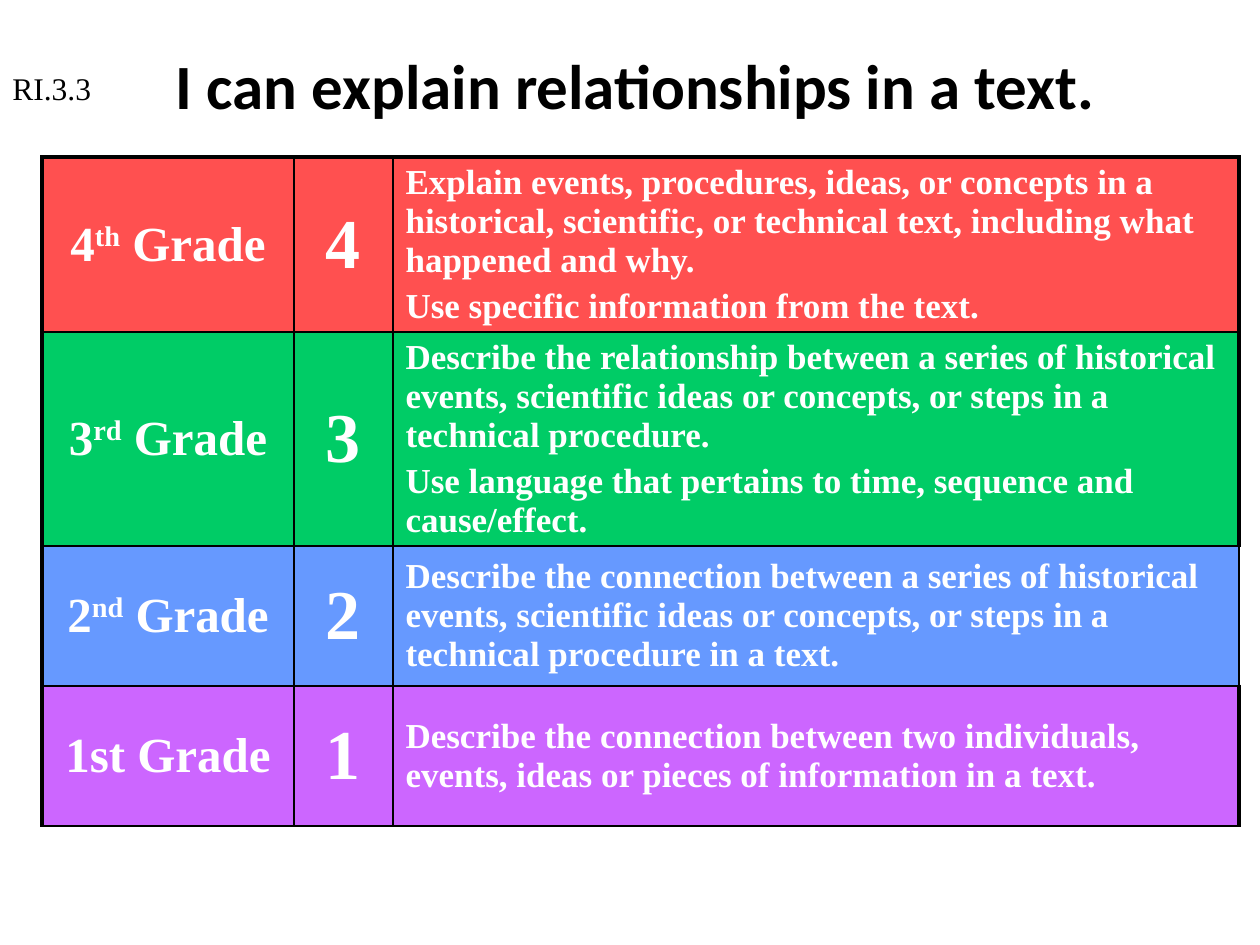
from lxml import etree
from pptx import Presentation
from pptx.dml.color import RGBColor
from pptx.enum.text import MSO_ANCHOR, MSO_AUTO_SIZE, PP_ALIGN
from pptx.oxml.ns import qn
from pptx.util import Emu, Pt

PX = 914400 // 126
CENTER, LEFT = PP_ALIGN.CENTER, PP_ALIGN.LEFT
MIDDLE = MSO_ANCHOR.MIDDLE
FIT_SHAPE = MSO_AUTO_SIZE.SHAPE_TO_FIT_TEXT
TITLE_ONLY = 5

BLACK = RGBColor(0x00, 0x00, 0x00)
WHITE = RGBColor(0xFF, 0xFF, 0xFF)
RED = RGBColor(0xFF, 0x50, 0x50)
GREEN = RGBColor(0x00, 0xCC, 0x66)
BLUE = RGBColor(0x66, 0x99, 0xFF)
PURPLE = RGBColor(0xCC, 0x66, 0xFF)
SERIF, SANS = "Times New Roman", "Calibri"

COL_WIDTHS = (252, 99, 846)
THIN, MEDIUM, THICK = 1, 1.5, 2.25
BORDER_TAGS = ("a:lnL", "a:lnR", "a:lnT", "a:lnB")

# Height, fill, grade runs (text, raised), score, goals,
# vertical borders from left to right, and top and bottom borders by column
LEVELS = [
    (147, RED, [("4", False), ("th", True), (" Grade", False)], "4",
     ["Explain events, procedures, ideas, or concepts in a historical, "
      "scientific, or technical text, including what happened and why.",
      "Use specific information from the text."],
     (THICK, THIN, THIN, THICK), [(THICK, MEDIUM)] * 3),
    (161, GREEN, [("3", False), ("rd", True), (" Grade", False)], "3",
     ["Describe the relationship between a series of historical events, "
      "scientific ideas or concepts, or steps in a technical procedure.",
      "Use language that pertains to time, sequence and cause/effect."],
     (THICK, THIN, THIN, THICK),
     [(MEDIUM, THIN), (MEDIUM, THIN), (MEDIUM, MEDIUM)]),
    (140, BLUE, [("2", False), ("nd", True), (" Grade", False)], "2",
     ["Describe the connection between a series of historical events, "
      "scientific ideas or concepts, or steps in a technical procedure "
      "in a text."],
     (THICK, MEDIUM, MEDIUM, MEDIUM),
     [(THIN, THIN), (THIN, THIN), (MEDIUM, MEDIUM)]),
    (140, PURPLE, [("1st Grade", False)], "1",
     ["Describe the connection between two individuals, events, ideas or "
      "pieces of information in a text."],
     (THICK, THIN, THIN, THICK),
     [(THIN, MEDIUM), (THIN, MEDIUM), (MEDIUM, MEDIUM)]),
]


def px(n):
    return Emu(n * PX)


def style_font(font, size, name, color, bold=False):
    font.size = Pt(size)
    font.name = name
    font.color.rgb = color
    font.bold = bold


def set_borders(cell, widths):
    """Give a cell black left, right, top and bottom lines."""
    tcPr = cell._tc.get_or_add_tcPr()
    for tag, width in zip(BORDER_TAGS, widths):
        ln = etree.SubElement(tcPr, qn(tag), w=str(Pt(width)))
        fill = etree.SubElement(ln, qn("a:solidFill"))
        etree.SubElement(fill, qn("a:srgbClr"), val=str(BLACK))


def fill_cell(cell, paragraphs, size, align, color, borders):
    """Write paragraphs of (text, raised) runs into a coloured cell."""
    set_borders(cell, borders)
    cell.fill.solid()
    cell.fill.fore_color.rgb = color
    cell.vertical_anchor = MIDDLE
    tf = cell.text_frame
    for i, runs in enumerate(paragraphs):
        p = tf.add_paragraph() if i else tf.paragraphs[0]
        p.alignment = align
        if i:
            p.space_before = Pt(size * 0.2)
        for text, raised in runs:
            r = p.add_run()
            r.text = text
            style_font(r.font, size, SERIF, WHITE, bold=True)
            if raised:
                r._r.get_or_add_rPr().set("baseline", "30000")


def add_title(slide, text):
    sp = slide.shapes.title
    sp.left, sp.top, sp.width, sp.height = px(32), px(21), px(1207), px(126)
    tf = sp.text_frame
    tf.text = text
    tf.vertical_anchor = MIDDLE
    p = tf.paragraphs[0]
    p.alignment = CENTER
    style_font(p.runs[0].font, 36, SANS, BLACK, bold=True)


def add_label(slide, text):
    sp = slide.shapes.add_textbox(px(0), px(63), px(179), px(50))
    tf = sp.text_frame
    tf.word_wrap = True
    tf.auto_size = FIT_SHAPE
    tf.text = text
    style_font(tf.paragraphs[0].runs[0].font, 18, SERIF, BLACK)


def add_scale_table(slide):
    height = sum(level[0] for level in LEVELS)
    frame = slide.shapes.add_table(len(LEVELS), len(COL_WIDTHS), px(42),
                                   px(157), px(sum(COL_WIDTHS)), px(height))
    table = frame.table
    table.first_row = table.horz_banding = False
    for column, width in zip(table.columns, COL_WIDTHS):
        column.width = px(width)
    for row, level in zip(table.rows, LEVELS):
        row_height, color, grade, score, goals, sides, ends = level
        row.height = px(row_height)
        contents = [
            ([grade], 28, CENTER),
            ([[(score, False)]], 40, CENTER),
            ([[(goal, False)] for goal in goals], 20, LEFT),
        ]
        for c, (paragraphs, size, align) in enumerate(contents):
            borders = sides[c:c + 2] + ends[c]
            fill_cell(row.cells[c], paragraphs, size, align, color, borders)


def main():
    prs = Presentation()
    prs.slide_width, prs.slide_height = px(1260), px(945)
    slide = prs.slides.add_slide(prs.slide_layouts[TITLE_ONLY])

    # Heading, grade scale and standard code
    add_title(slide, "I can explain relationships in a text.")
    add_scale_table(slide)
    add_label(slide, "RI.3.3")

    prs.save("out.pptx")


if __name__ == "__main__":
    main()
